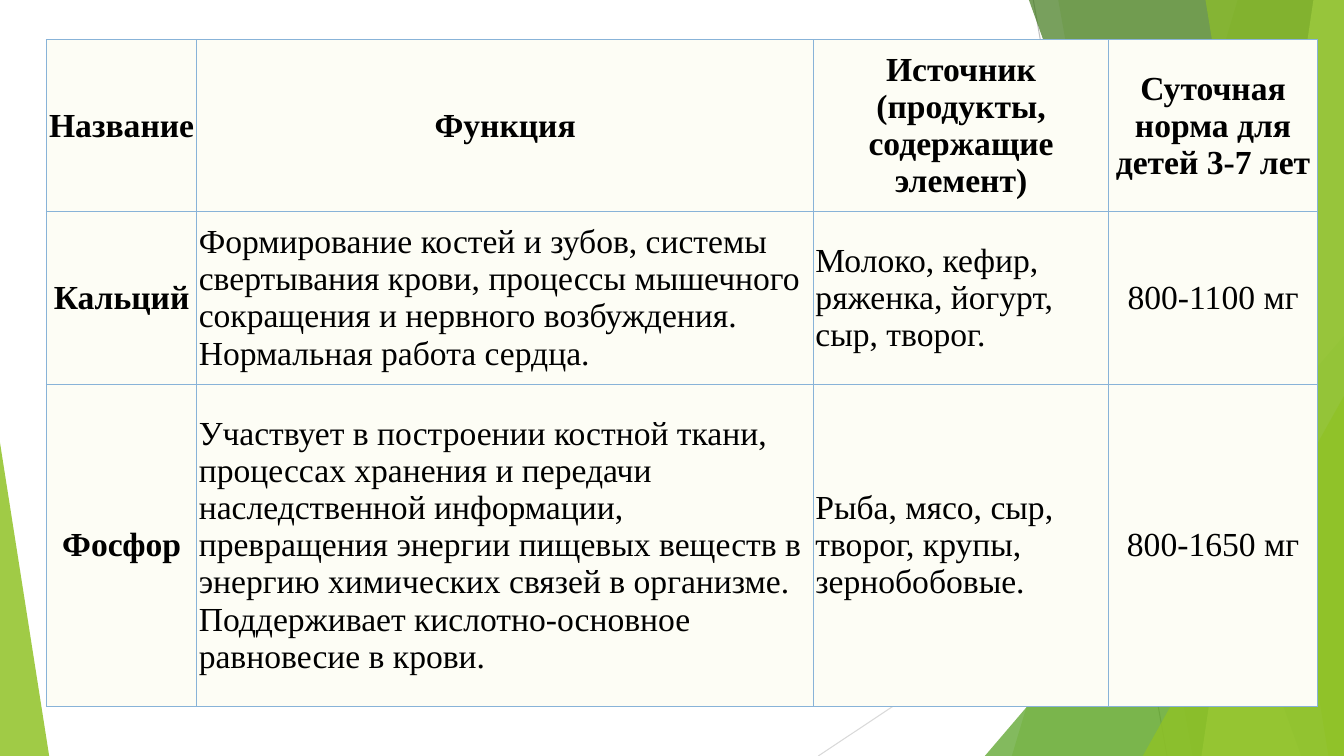
from dataclasses import dataclass

import pptx
import pptx.dml.color
import pptx.enum.shapes
import pptx.enum.text
import pptx.oxml
import pptx.oxml.ns
import pptx.util
from pptx.util import Cm

WIDTH, HEIGHT = 33.87, 19.05
COLOURS = {
    "green": "90C226", "leaf": "54A021", "forest": "3F7819", "lime": "C0E474",
    "grey": "BFBFBF", "pale grey": "D9D9D9",
    "border": "88B3D8", "cream": "FDFDF5", "black": "000000",
}


@dataclass
class Ray:
    start: tuple[float, float]
    end: tuple[float, float]
    colour: str


@dataclass
class Band:
    """A full-height band between a slanted left edge and the slide's right edge."""
    top_x: float
    bottom_x: float
    colour: str
    opacity: int


@dataclass
class Wedge:
    """A triangle standing on the slide's bottom edge; apex is 0 (left) to 1 (right)."""
    left: float
    top: float
    width: float
    apex: float
    colour: str
    opacity: int


RAYS = [
    Ray((26.04, 0), (29.41, HEIGHT), "grey"),
    Ray((WIDTH, 10.24), (20.62, HEIGHT), "pale grey"),
]
FACETS = [
    Band(31.19, 25.5, "green", 30),
    Band(26.67, 30.05, "green", 20),
    Wedge(24.82, 8.46, 9.05, 1, "leaf", 72),
    Band(25.93, 32.79, "forest", 70),
    Band(33.1, 30.28, "lime", 70),
    Band(30.38, 33.48, "green", 65),
    Wedge(28.8, 9.98, 5.07, 1, "green", 80),
    Wedge(0, 11.15, 1.24, 0, "green", 85),
]

COLUMN_WIDTHS = [3.79, 15.54, 7.44, 5.26]
ROW_HEIGHTS = [4.34, 4.34, 8.13]
MINERALS = [
    ["Название", "Функция", "Источник (продукты, содержащие элемент)",
     "Суточная норма для детей 3-7 лет"],
    ["Кальций",
     "Формирование костей и зубов, системы свертывания крови, процессы мышечного "
     "сокращения и нервного возбуждения. Нормальная работа сердца.",
     "Молоко, кефир, ряженка, йогурт, сыр, творог.", "800-1100 мг"],
    ["Фосфор",
     "Участвует в построении костной ткани, процессах хранения и передачи "
     "наследственной информации, превращения энергии пищевых веществ в энергию "
     "химических связей в организме. Поддерживает кислотно-основное равновесие в крови.",
     "Рыба, мясо, сыр, творог, крупы, зернобобовые.", "800-1650 мг"],
]


def rgb(name: str) -> pptx.dml.color.RGBColor:
    return pptx.dml.color.RGBColor.from_string(COLOURS[name])


def draw_ray(page, ray: Ray) -> None:
    line = page.shapes.add_connector(
        pptx.enum.shapes.MSO_CONNECTOR.STRAIGHT,
        *(Cm(value) for value in ray.start + ray.end))
    line.line.color.rgb = rgb(ray.colour)
    line.line.width = pptx.util.Pt(0.75)
    pptx.oxml.ns.qn("a:effectLst")
    line._element.spPr.append(
        pptx.oxml.parse_xml(f"<a:effectLst {pptx.oxml.ns.nsdecls('a')}/>"))


def draw_facet(page, facet: Band | Wedge) -> None:
    if isinstance(facet, Band):
        builder = page.shapes.build_freeform(Cm(facet.top_x), 0)
        corners = [(WIDTH, 0), (WIDTH, HEIGHT), (facet.bottom_x, HEIGHT)]
        builder.add_line_segments([(Cm(x), Cm(y)) for x, y in corners], close=True)
        shape = builder.convert_to_shape()
    else:
        shape = page.shapes.add_shape(
            pptx.enum.shapes.MSO_SHAPE.ISOSCELES_TRIANGLE, Cm(facet.left),
            Cm(facet.top), Cm(facet.width), Cm(HEIGHT - facet.top))
        shape.adjustments[0] = facet.apex
    shape.shadow.inherit = False
    shape.line.fill.background()
    shape.fill.solid()
    shape.fill.fore_color.rgb = rgb(facet.colour)
    colour = shape._element.spPr.find(".//" + pptx.oxml.ns.qn("a:srgbClr"))
    colour.append(pptx.oxml.parse_xml(
        f'<a:alpha {pptx.oxml.ns.nsdecls("a")} val="{facet.opacity * 1000}"/>'))


def style_cell(cell, text: str, bold: bool, centred: bool) -> None:
    cell.margin_left = cell.margin_right = Cm(0.05)
    cell.margin_top = cell.margin_bottom = Cm(0.05)
    cell.vertical_anchor = pptx.enum.text.MSO_ANCHOR.MIDDLE
    properties = cell._tc.get_or_add_tcPr()
    for side in ("lnL", "lnR", "lnT", "lnB"):
        properties.append(pptx.oxml.parse_xml(
            f'<a:{side} {pptx.oxml.ns.nsdecls("a")} w="9525"><a:solidFill>'
            f'<a:srgbClr val="{COLOURS["border"]}"/></a:solidFill></a:{side}>'))
    cell.fill.solid()
    cell.fill.fore_color.rgb = rgb("cream")
    cell.text = text
    para = cell.text_frame.paragraphs[0]
    align = pptx.enum.text.PP_ALIGN
    para.alignment = align.CENTER if centred else align.LEFT
    para.font.name = "Times New Roman"
    para.font.size = pptx.util.Pt(24)
    para.font.bold = bold
    para.font.color.rgb = rgb("black")


def draw_minerals(page) -> None:
    table = page.shapes.add_table(
        len(ROW_HEIGHTS), len(COLUMN_WIDTHS), Cm(1.17), Cm(1),
        Cm(sum(COLUMN_WIDTHS)), Cm(sum(ROW_HEIGHTS))).table
    table.first_row = table.horz_banding = False
    for column, width in zip(table.columns, COLUMN_WIDTHS):
        column.width = Cm(width)
    for row, height in zip(table.rows, ROW_HEIGHTS):
        row.height = Cm(height)
    for i, texts in enumerate(MINERALS):
        for j, text in enumerate(texts):
            heading = i == 0 or j == 0
            style_cell(table.cell(i, j), text, bold=heading, centred=heading or j == 3)


def main() -> None:
    deck = pptx.Presentation()
    deck.slide_width, deck.slide_height = Cm(WIDTH), Cm(HEIGHT)
    page = deck.slides.add_slide(deck.slide_layouts[6])
    for ray in RAYS:
        draw_ray(page, ray)
    for facet in FACETS:
        draw_facet(page, facet)
    draw_minerals(page)
    deck.save("out.pptx")


if __name__ == "__main__":
    main()
